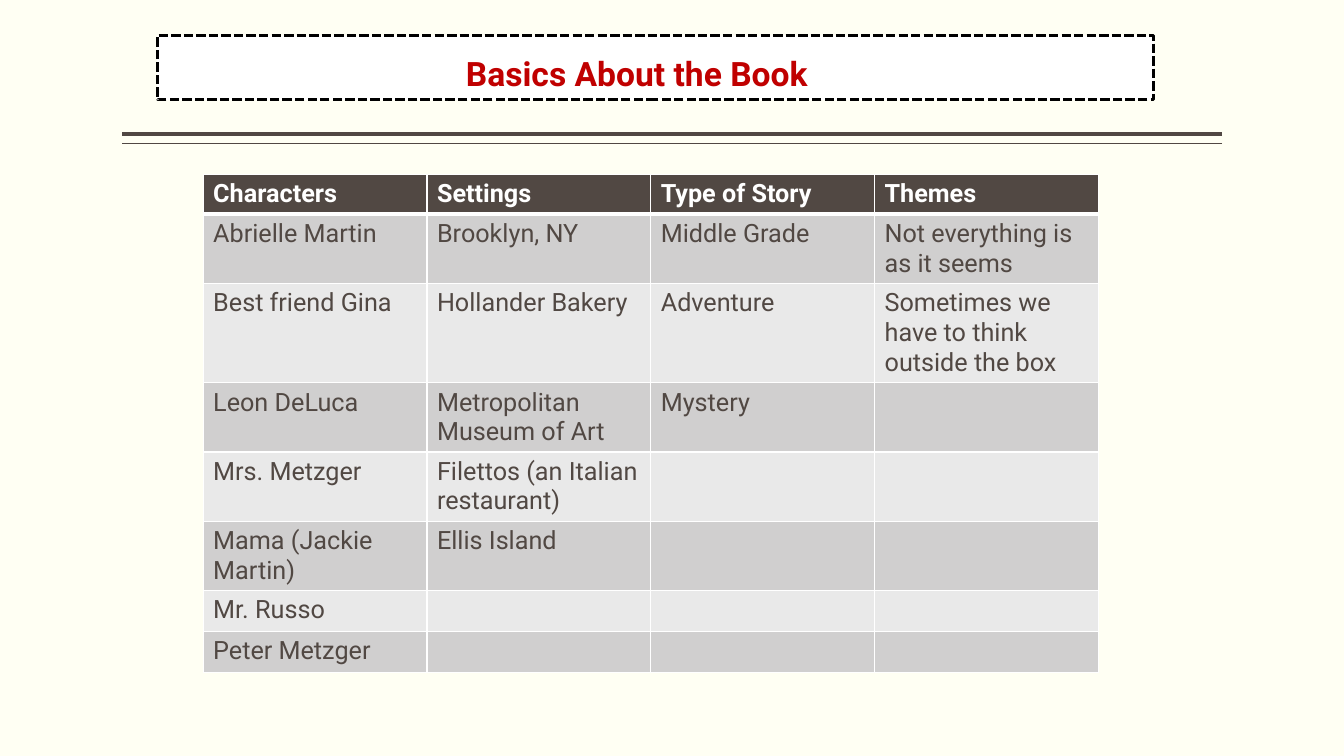
from lxml import etree
from pptx import Presentation
from pptx import util as u
from pptx.dml.color import RGBColor
from pptx.enum import dml, shapes, text
from pptx.oxml import ns

COLORS = {
    "page": "FFFFF3", "white": "FFFFFF", "black": "000000", "brown": "514843",
    "red": "C00000", "odd_row": "D0CFCF", "even_row": "E9E9E9",
}
TITLE_FONT = {"name": "Roboto", "size": u.Pt(24), "bold": True}
HEADER_FONT = {"name": "Roboto", "size": u.Pt(18), "bold": True}
BODY_FONT = {"name": "Roboto", "size": u.Pt(18), "bold": False}


def style_font(font, formats, color):
    for attribute, value in formats.items():
        setattr(font, attribute, value)
    font.color.rgb = RGBColor.from_string(COLORS[color])


def add_border(cell, side, points):
    edge = etree.SubElement(cell._tc.get_or_add_tcPr(), ns.qn(f"a:{side}"), w=str(u.Pt(points)))
    fill = etree.SubElement(edge, ns.qn("a:solidFill"))
    etree.SubElement(fill, ns.qn("a:srgbClr"), val=COLORS["white"])


deck = Presentation()
deck.slide_width, deck.slide_height = u.Cm(33.87), u.Cm(19.05)
slide = deck.slides.add_slide(deck.slide_layouts[6])
slide.background.fill.solid()
slide.background.fill.fore_color.rgb = RGBColor.from_string(COLORS["page"])

for rule_top, rule_width in ((3.38, 3), (3.62, 1)):
    rule = slide.shapes.add_connector(
        shapes.MSO_CONNECTOR.STRAIGHT, u.Cm(30.8), u.Cm(rule_top), u.Cm(3.07), u.Cm(rule_top))
    rule.line.color.rgb = RGBColor.from_string(COLORS["brown"])
    rule.line.width = u.Pt(rule_width)
    etree.SubElement(rule._element.spPr, ns.qn("a:effectLst"))

title = slide.shapes.add_shape(
    shapes.MSO_SHAPE.RECTANGLE, u.Cm(3.96), u.Cm(0.9), u.Cm(25.12), u.Cm(1.62))
title.shadow.inherit = False
title.fill.solid()
title.fill.fore_color.rgb = RGBColor.from_string(COLORS["white"])
title.line.color.rgb = RGBColor.from_string(COLORS["black"])
title.line.width = u.Pt(2.25)
title.line.dash_style = dml.MSO_LINE.SQUARE_DOT
title_format = {
    "word_wrap": True, "vertical_anchor": text.MSO_ANCHOR.MIDDLE,
    "margin_left": 0, "margin_right": u.Cm(0.94), "margin_top": u.Cm(0.28), "margin_bottom": 0,
}
for attribute, value in title_format.items():
    setattr(title.text_frame, attribute, value)
heading = title.text_frame.paragraphs[0]
heading.alignment = text.PP_ALIGN.CENTER
heading.text = "Basics About the Book"
style_font(heading.runs[0].font, TITLE_FONT, "red")

book_facts = [
    ("Characters", "Settings", "Type of Story", "Themes"),
    ("Abrielle Martin", "Brooklyn, NY", "Middle Grade", "Not everything is as it seems"),
    ("Best friend Gina", "Hollander Bakery", "Adventure",
     "Sometimes we have to think outside the box"),
    ("Leon DeLuca", "Metropolitan Museum of Art", "Mystery", ""),
    ("Mrs. Metzger", "Filettos (an Italian restaurant)", "", ""),
    ("Mama (Jackie Martin)", "Ellis Island", "", ""),
    ("Mr. Russo", "", "", ""),
    ("Peter Metzger", "", "", ""),
]
row_heights = [0.98, 1.74, 2.5, 1.74, 1.74, 1.74, 1.03, 1.03]
facts_table = slide.shapes.add_table(
    len(book_facts), 4, u.Cm(5.12), u.Cm(4.4), u.Cm(22.56), u.Cm(sum(row_heights))).table

for column in facts_table.columns:
    column.width = u.Cm(5.64)

for r, (facts, height) in enumerate(zip(book_facts, row_heights)):
    facts_table.rows[r].height = u.Cm(height)
    is_header = r == 0
    row_fill = "brown" if is_header else "odd_row" if r % 2 else "even_row"
    for c, fact in enumerate(facts):
        cell = facts_table.cell(r, c)
        for side in ("lnL", "lnR", "lnT", "lnB"):
            is_header_rule = (r, side) in ((0, "lnB"), (1, "lnT"))
            add_border(cell, side, 3 if is_header_rule else 1)
        cell.fill.solid()
        cell.fill.fore_color.rgb = RGBColor.from_string(COLORS[row_fill])
        if fact:
            cell.text = fact
            style_font(cell.text_frame.paragraphs[0].runs[0].font,
                       HEADER_FONT if is_header else BODY_FONT,
                       "white" if is_header else "brown")

deck.save("out.pptx")
